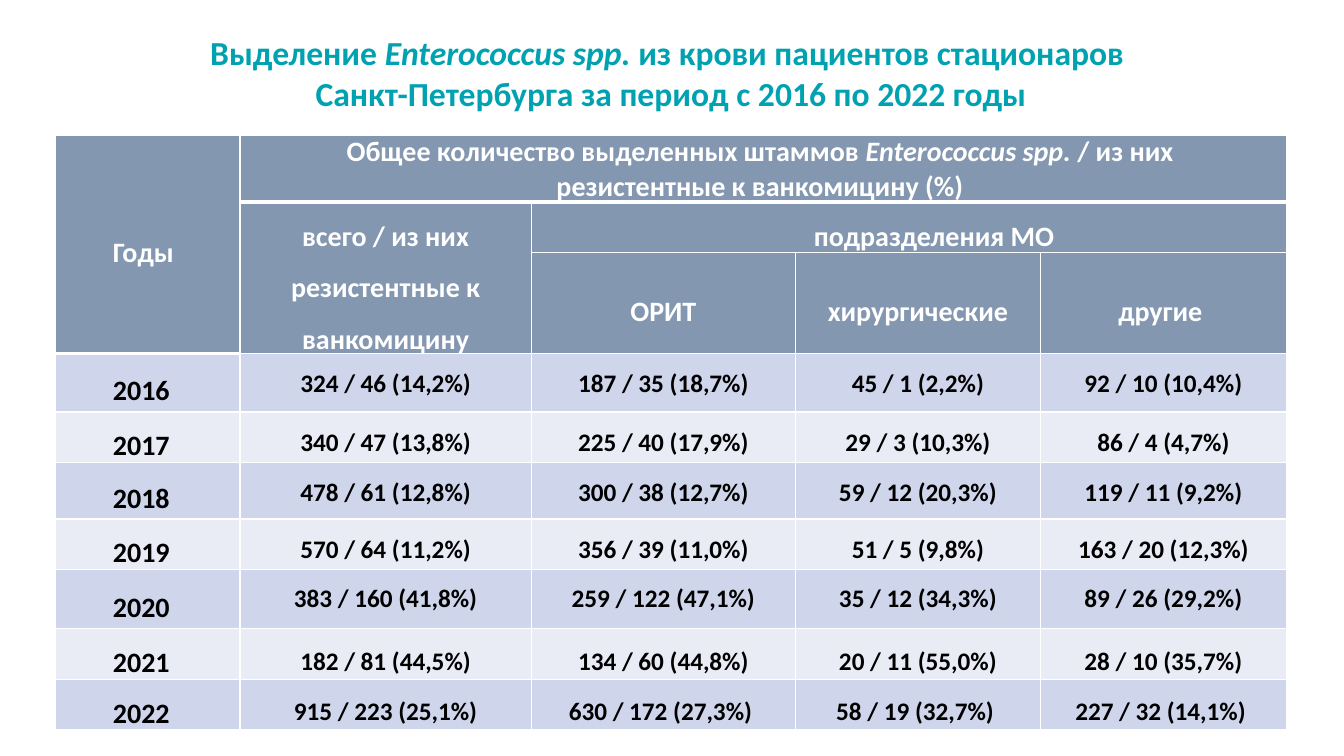
"""Build the slide with the table of Enterococcus isolates by year and department."""
from lxml.etree import SubElement
from pptx import Presentation
from pptx.dml.color import RGBColor
from pptx.enum.text import MSO_ANCHOR, MSO_AUTO_SIZE, PP_ALIGN
from pptx.oxml.ns import qn
from pptx.util import Inches, Pt

COLORS = {"title": "00A2B1", "header": "8497B0", "odd": "CFD5EA", "even": "E9EBF5",
          "white": "FFFFFF", "black": "000000"}
SPECIES = "Enterococcus spp. "


def add_run(paragraph, text, size, color):
    run = paragraph.add_run()
    run.text = text
    run.font.name = "Calibri"
    run.font.size = Pt(size)
    run.font.bold = True
    run.font.italic = text == SPECIES
    run.font.color.rgb = RGBColor.from_string(COLORS[color])


def style_cell(cell, fill, edges, margin, anchor):
    properties = cell._tc.get_or_add_tcPr()
    for side, width in zip("LRTB", edges):
        line = SubElement(properties, qn(f"a:ln{side}"), w=str(Pt(width)))
        solid = SubElement(line, qn("a:solidFill"))
        SubElement(solid, qn("a:srgbClr"), val=COLORS["white"])
    cell.fill.solid()
    cell.fill.fore_color.rgb = RGBColor.from_string(COLORS[fill])
    cell.margin_left = cell.margin_right = Inches(margin)
    cell.margin_top = cell.margin_bottom = 0
    cell.vertical_anchor = anchor


presentation = Presentation()
presentation.slide_width = Inches(13.33)
presentation.slide_height = Inches(7.5)
slide = presentation.slides.add_slide(presentation.slide_layouts[6])

title = slide.shapes.add_textbox(Inches(1.65), Inches(0.27), Inches(10.01), Inches(0.91))
title.text_frame.word_wrap = True
title.text_frame.auto_size = MSO_AUTO_SIZE.SHAPE_TO_FIT_TEXT
paragraph = title.text_frame.paragraphs[0]
paragraph.alignment = PP_ALIGN.CENTER
for text in ("Выделение ", SPECIES, "из крови пациентов стационаров "):
    add_run(paragraph, text, 24, "title")
paragraph.add_line_break()
add_run(paragraph, "Санкт-Петербурга за период с 2016 по 2022 годы", 24, "title")

column_widths = [1.83, 2.89, 2.62, 2.43, 2.44]
row_heights = [0.64, 0.42, 0.58, 0.58, 0.49, 0.56, 0.49, 0.59, 0.5, 0.5]
table = slide.shapes.add_table(len(row_heights), len(column_widths), Inches(0.55), Inches(1.34),
                               Inches(12.2), Inches(5.9)).table
for column, width in zip(table.columns, column_widths):
    column.width = Inches(width)
for row, height in zip(table.rows, row_heights):
    row.height = Inches(height)
for first, last in (((0, 0), (2, 0)), ((0, 1), (0, 4)), ((1, 1), (2, 1)), ((1, 2), (1, 4))):
    table.cell(*first).merge(table.cell(*last))

headers = {
    (0, 0): [["Годы"]],
    (0, 1): [["Общее количество выделенных штаммов ", SPECIES, "/ из них "],
             ["резистентные к ванкомицину (%) "]],
    (1, 1): [["всего / из них резистентные к ванкомицину"]],
    (1, 2): [["подразделения МО"]],
    (2, 2): [["ОРИТ"]],
    (2, 3): [["хирургические"]],
    (2, 4): [["другие "]],
}
yearly_counts = [
    ("2016", "324 / 46 (14,2%)", "187 / 35 (18,7%)", "45 / 1 (2,2%)", "92 / 10 (10,4%)"),
    ("2017", "340 / 47 (13,8%)", "225 / 40 (17,9%)", "29 / 3 (10,3%)", "86 / 4 (4,7%)"),
    ("2018", "478 / 61 (12,8%)", "300 / 38 (12,7%)", "59 / 12 (20,3%)", "119 / 11 (9,2%)"),
    ("2019", "570 / 64 (11,2%)", "356 / 39 (11,0%)", "51 / 5 (9,8%)", "163 / 20 (12,3%)"),
    ("2020", "383 / 160 (41,8%)", "259 / 122 (47,1%)", "35 / 12 (34,3%)", "89 / 26 (29,2%)"),
    ("2021", "182 / 81 (44,5%)", "134 / 60 (44,8%)", "20 / 11 (55,0%)", "28 / 10 (35,7%)"),
    ("2022", "915 / 223 (25,1%)", "630 / 172 (27,3%) ", "58 / 19 (32,7%) ", "227 / 32 (14,1%) "),
]
contents = dict(headers)
for row_index, counts in enumerate(yearly_counts, start=3):
    for column_index, text in enumerate(counts):
        contents[row_index, column_index] = [[text]]

thick_edges = {(3, 0)} | {(1, column_index) for column_index in range(1, 5)}
for (row_index, column_index), paragraphs in contents.items():
    cell = table.cell(row_index, column_index)
    is_header = row_index < 3
    is_year_column = column_index == 0
    is_hanging = 3 <= row_index <= 6 and not is_year_column
    fill = "header" if is_header else "odd" if row_index % 2 else "even"
    bottom_row = row_index + (cell.span_height if cell.is_merge_origin else 1)
    top, bottom = (3 if (edge, column_index) in thick_edges else 1
                   for edge in (row_index, bottom_row))
    style_cell(cell, fill, (1, 1, top, bottom), 0.05 if is_hanging else 0.07,
               MSO_ANCHOR.TOP if is_hanging else MSO_ANCHOR.MIDDLE)
    for index, texts in enumerate(paragraphs):
        paragraph = cell.text_frame.add_paragraph() if index else cell.text_frame.paragraphs[0]
        paragraph.alignment = PP_ALIGN.LEFT if is_year_column else PP_ALIGN.CENTER
        if (row_index, column_index) != (0, 1) and (row_index != 7 or is_year_column):
            paragraph.line_spacing = 1.5
        if is_year_column or is_hanging or (row_index, column_index) == (1, 2):
            indents = paragraph._p.get_or_add_pPr()
            indents.set("marL", str(Inches(0.5)))
            indents.set("indent", str(Inches(-0.5 if is_hanging else 0)))
        for text in texts:
            add_run(paragraph, text, 20 if is_header or is_year_column else 18,
                    "white" if is_header else "black")

presentation.save("out.pptx")
